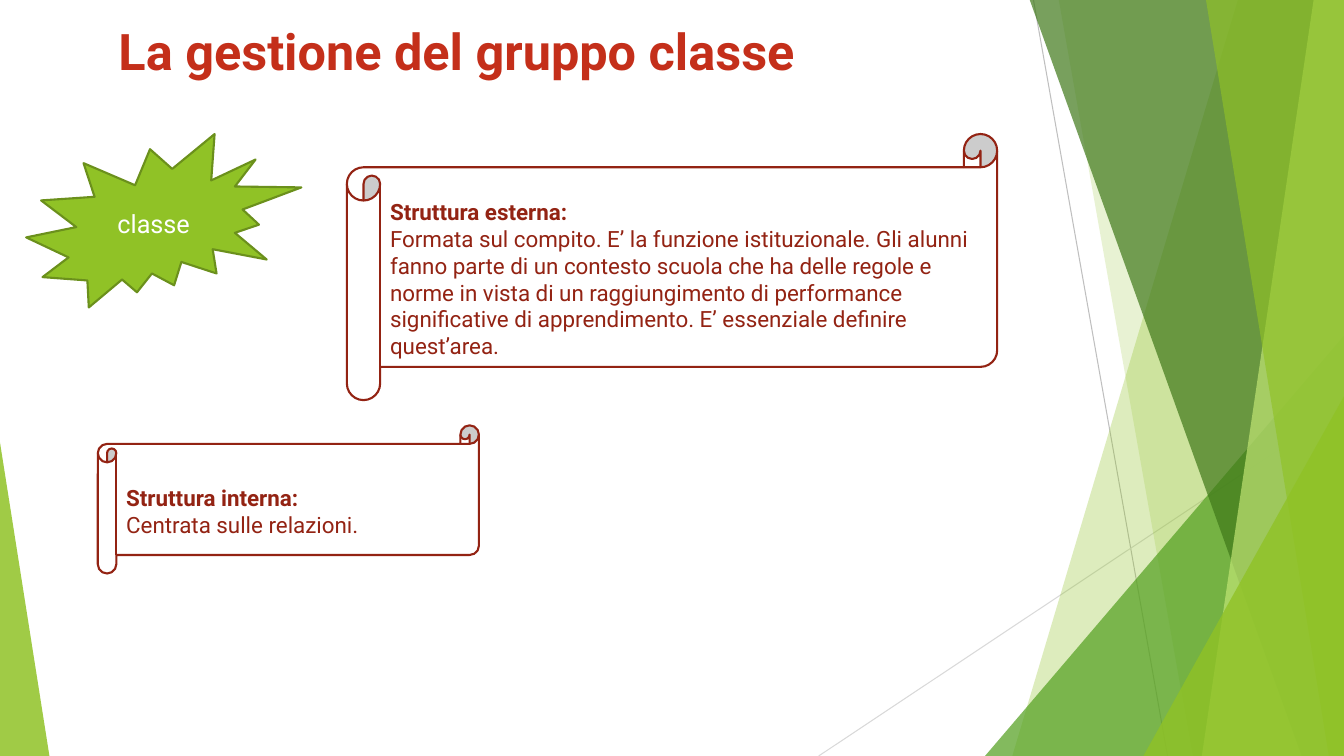
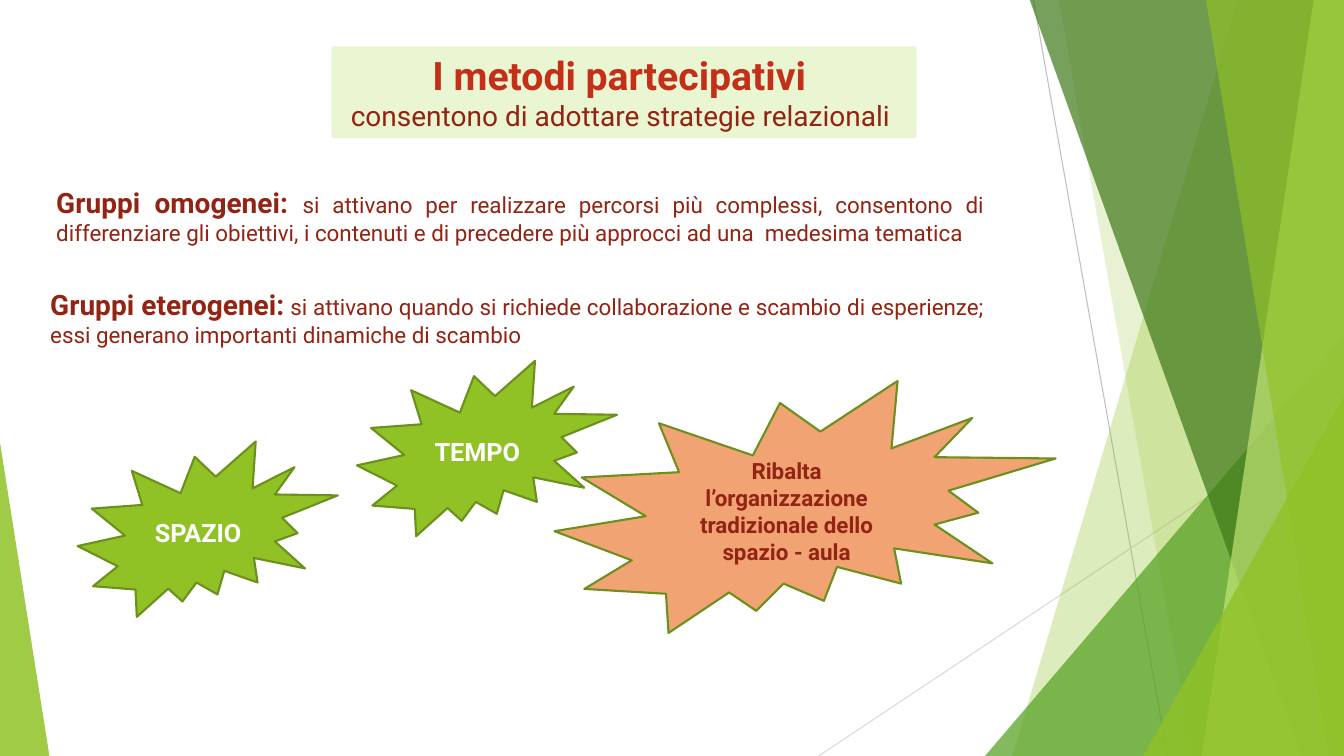
from lxml.etree import SubElement
from pptx import Presentation
from pptx.dml.color import RGBColor
from pptx.enum.shapes import MSO_CONNECTOR as Connector, MSO_SHAPE as Preset
from pptx.enum.text import MSO_ANCHOR as Anchor, PP_ALIGN as Align
from pptx.oxml.ns import qn
from pptx.util import Pt

EMU_PER_PX = 9144
WIDTH, HEIGHT = 1333, 750
BLANK_LAYOUT = 6

GREEN, DARK_GREEN, WHITE = "90C226", "6B901C", "FFFFFF"
RED, BROWN = "C42F1A", "932313"
PALE_GREEN, ORANGE = "EAF6D1", "F1A374"


def emu(*lengths):
    """Turn px lengths into EMU."""
    return [length * EMU_PER_PX for length in lengths]


def rgb(color):
    """Turn a hex string into a colour."""
    return RGBColor.from_string(color)


def apply(target, values):
    """Set each named value on the target."""
    for name, value in values.items():
        setattr(target, name, value)


def style(size, color, bold=False):
    """Describe the look of a run."""
    return {"size": Pt(size), "color": color, "bold": bold}


class Deck:
    """Hold the shared style and the current slide."""

    font = "Roboto"
    heading = style(16, BROWN, True)
    body = style(16, BROWN)
    lead = style(20, BROWN, True)
    hairlines = [
        ((1025, 0), (1158, HEIGHT), "BFBFBF"),
        ((WIDTH, 403), (812, HEIGHT), "D9D9D9"),
    ]
    bands_and_triangles = [
        ((1228, 1004), GREEN, 30),
        ((1050, 1183), GREEN, 20),
        ((977, 333, 356, 417, 1), "54A021", 72),
        ((1021, 1291), "3F7819", 70),
        ((1303, 1192), "C0E474", 70),
        ((1196, 1318), GREEN, 65),
        ((1134, 393, 199, 357, 1), GREEN, 80),
        ((0, 439, 49, 311, 0), GREEN, 85),
    ]

    def __init__(self):
        """Start an empty wide presentation."""
        self.presentation = Presentation()
        width, height = emu(WIDTH, HEIGHT)
        apply(self.presentation, {"slide_width": width, "slide_height": height})
        self.slide = None

    def new_slide(self):
        """Add a slide with the shared decoration."""
        layout = self.presentation.slide_layouts[BLANK_LAYOUT]
        self.slide = self.presentation.slides.add_slide(layout)
        for start, end, color in self.hairlines:
            self.hairline(start, end, color)
        for geometry, color, opacity in self.bands_and_triangles:
            draw = self.band if len(geometry) == 2 else self.triangle
            self.paint(draw(*geometry), color, opacity=opacity)

    def hairline(self, start, end, color):
        """Draw a thin straight line."""
        line = self.slide.shapes.add_connector(Connector.STRAIGHT, *emu(*start, *end))
        line.line.color.rgb = rgb(color)
        line.line.width = Pt(0.75)
        SubElement(line.element.spPr, qn("a:effectLst"))

    def band(self, top_x, bottom_x):
        """Outline a full-height band that ends at the right edge."""
        builder = self.slide.shapes.build_freeform(top_x, -1, scale=EMU_PER_PX)
        builder.add_line_segments([(WIDTH, -1), (WIDTH, HEIGHT), (bottom_x, HEIGHT)])
        return builder.convert_to_shape()

    def triangle(self, left, top, width, height, apex):
        """Add a triangle with its apex at a fraction of the width."""
        shape = self.slide.shapes.add_shape(
            Preset.ISOSCELES_TRIANGLE, *emu(left, top, width, height))
        shape.adjustments[0] = apex
        return shape

    def paint(self, shape, fill, line=None, opacity=100):
        """Fill and outline a shape without shadow."""
        shape.shadow.inherit = False
        shape.fill.solid()
        shape.fill.fore_color.rgb = rgb(fill)
        if opacity < 100:
            color = shape.element.spPr.find(".//" + qn("a:srgbClr"))
            SubElement(color, qn("a:alpha"), val=str(opacity * 1000))
        if line:
            shape.line.color.rgb = rgb(line)
            shape.line.width = Pt(1.5)
        else:
            shape.line.fill.background()

    def set_text(self, shape, paragraphs, align, anchor=Anchor.TOP, **frame_format):
        """Fill a shape with paragraphs given as lists of styled runs."""
        frame = shape.text_frame
        apply(frame, {"word_wrap": True, "vertical_anchor": anchor, **frame_format})
        for index, runs in enumerate(paragraphs):
            paragraph = frame.add_paragraph() if index else frame.paragraphs[0]
            paragraph.alignment = align
            for text, look in runs:
                run = paragraph.add_run()
                run.text = text
                apply(run.font, {"name": self.font, "size": look["size"], "bold": look["bold"]})
                run.font.color.rgb = rgb(look["color"])

    def text(self, box, paragraphs, align):
        """Add a text box."""
        self.set_text(self.slide.shapes.add_textbox(*emu(*box)), paragraphs, align)

    def panel(self, box, paragraphs):
        """Add a tinted title panel."""
        shape = self.slide.shapes.add_shape(Preset.RECTANGLE, *emu(*box))
        self.paint(shape, PALE_GREEN)
        self.set_text(shape, paragraphs, Align.CENTER)

    def burst(self, box, text, look, fill=GREEN):
        """Add a star burst with a centred label."""
        shape = self.slide.shapes.add_shape(Preset.EXPLOSION2, *emu(*box))
        self.paint(shape, fill, DARK_GREEN)
        self.set_text(shape, [[(text, look)]], Align.CENTER, Anchor.MIDDLE)

    def scroll(self, box, heading, body):
        """Add a scroll with a heading and a body."""
        shape = self.slide.shapes.add_shape(Preset.HORIZONTAL_SCROLL, *emu(*box))
        self.paint(shape, WHITE, BROWN)
        paragraphs = [[(heading, self.heading)], [(body, self.body)]]
        self.set_text(shape, paragraphs, Align.LEFT, Anchor.MIDDLE, margin_top=emu(28)[0])


def class_group_slide(deck):
    """Build the slide on managing the class group."""
    deck.new_slide()
    deck.text((97, 15, 712, 71),
              [[("La gestione del gruppo classe", style(36, RED, True))]], Align.CENTER)
    deck.burst((26, 133, 273, 172), "classe", style(18, WHITE))
    deck.scroll((97, 422, 378, 147), "Struttura interna:", "Centrata sulle relazioni.")
    deck.scroll((344, 133, 645, 264), "Struttura esterna:",
                "Formata sul compito. E’ la funzione istituzionale. Gli alunni fanno parte "
                "di un contesto scuola che ha delle regole e norme in vista di un "
                "raggiungimento di performance significative di apprendimento. "
                "E’ essenziale definire quest’area.")


def methods_slide(deck):
    """Build the slide on participatory methods."""
    deck.new_slide()
    deck.panel((329, 46, 580, 91), [
        [("I metodi partecipativi ", style(28, RED, True))],
        [("consentono di adottare strategie relazionali ", style(20, BROWN))],
    ])
    groups = [
        ((46, 179, 940, 125), "Gruppi omogenei: ",
         "si attivano per realizzare percorsi più complessi, consentono di differenziare "
         "gli obiettivi, i contenuti e di precedere più approcci ad una  medesima tematica"),
        ((40, 280, 946, 98), "Gruppi eterogenei:",
         " si attivano quando si richiede collaborazione e scambio di esperienze; "
         "essi generano importanti dinamiche di scambio"),
    ]
    for box, name, description in groups:
        deck.text(box, [[(name, deck.lead), (description, deck.body)]], Align.JUSTIFY)
    for left, top, label in [(77, 438, "SPAZIO"), (354, 358, "TEMPO")]:
        deck.burst((left, top, 258, 174), label, style(18, WHITE, True))
    deck.burst((550, 378, 497, 250),
               "Ribalta l’organizzazione tradizionale dello spazio - aula",
               deck.heading, ORANGE)


def main():
    """Build and save the presentation."""
    deck = Deck()
    class_group_slide(deck)
    methods_slide(deck)
    deck.presentation.save("out.pptx")


if __name__ == "__main__":
    main()
